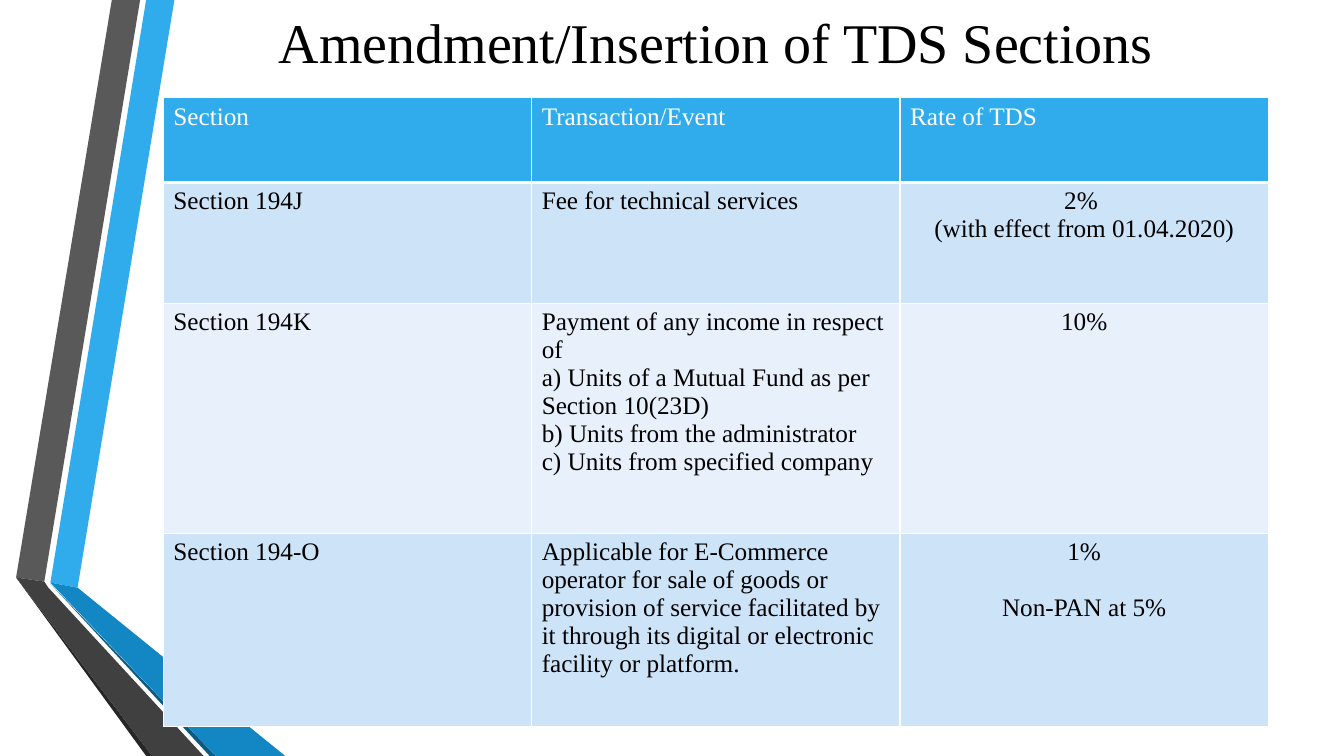
"""Build the slide on amended and inserted TDS sections."""
from lxml import etree
from pptx import Presentation
from pptx import util as u
from pptx.dml.color import RGBColor
from pptx.enum import text
from pptx.oxml.ns import qn

PX = 9144
FONT = "Times New Roman"
BLACK = RGBColor(0x00, 0x00, 0x00)
WHITE = RGBColor(0xFF, 0xFF, 0xFF)
BLUE = RGBColor(0x30, 0xAC, 0xEC)
MID_BLUE = RGBColor(0x12, 0x87, 0xC3)
DEEP_BLUE = RGBColor(0x0C, 0x5A, 0x82)
GREY = RGBColor(0x59, 0x59, 0x59)
DARK_GREY = RGBColor(0x40, 0x40, 0x40)
CHARCOAL = RGBColor(0x26, 0x26, 0x26)
BAND_DARK = RGBColor(0xCD, 0xE3, 0xF8)
BAND_LIGHT = RGBColor(0xE8, 0xF1, 0xFB)


def add_text(paragraph, words, size, color):
    run = paragraph.add_run()
    run.text = words
    run.font.name = FONT
    run.font.size = u.Pt(size)
    run.font.bold = False
    run.font.color.rgb = color


def add_border(cell, side, points):
    properties = cell._tc.get_or_add_tcPr()
    line = etree.SubElement(properties, qn(f"a:ln{side}"), w=str(u.Pt(points)))
    fill = etree.SubElement(line, qn("a:solidFill"))
    etree.SubElement(fill, qn("a:srgbClr"), val=str(WHITE))


presentation = Presentation()
presentation.slide_width = 1333 * PX
presentation.slide_height = 750 * PX
slide = presentation.slides.add_slide(presentation.slide_layouts[5])

ribbons = [
    (BLUE, [(50, 578), (77, 583), (173, 0), (145, 0)]),
    (GREY, [(139, 0), (111, 0), (16, 573), (44, 577)]),
    (CHARCOAL, [(16, 573), (145, 750), (151, 750)]),
    (DEEP_BLUE, [(50, 579), (208, 750), (214, 750)]),
    (MID_BLUE, [(50, 578), (214, 750), (283, 750), (77, 583)]),
    (DARK_GREY, [(202, 750), (48, 583), (44, 577), (16, 573), (151, 750)]),
]
for color, points in ribbons:
    builder = slide.shapes.build_freeform(*points[0], scale=PX)
    builder.add_line_segments(points[1:], close=True)
    ribbon = builder.convert_to_shape()
    ribbon.shadow.inherit = False
    ribbon.fill.solid()
    ribbon.fill.fore_color.rgb = color
    ribbon.line.fill.background()

title = slide.shapes.title
title.left, title.top, title.width, title.height = 162 * PX, 0, 1096 * PX, 82 * PX
title.text_frame.vertical_anchor = text.MSO_ANCHOR.MIDDLE
heading = title.text_frame.paragraphs[0]
heading.alignment = text.PP_ALIGN.CENTER
add_text(heading, "Amendment/Insertion of TDS Sections", 40, BLACK)

rows = [
    (84, BLUE, [["Section"], ["Transaction/Event"], ["Rate of TDS"]]),
    (120, BAND_DARK, [
        ["Section 194J"],
        ["Fee for technical services"],
        ["2% ", "(with effect from 01.04.2020)"],
    ]),
    (228, BAND_LIGHT, [
        ["Section 194K"],
        ["Payment of any income in respect of",
         "a) Units of a Mutual Fund as per Section 10(23D)",
         "b) Units from the administrator",
         "c) Units from specified company"],
        ["10%"],
    ]),
    (192, BAND_DARK, [
        ["Section 194-O"],
        ["Applicable for E-Commerce operator for sale of goods or provision of "
         "service facilitated by it through its digital or electronic facility "
         "or platform."],
        ["1%", "Non-PAN at 5%"],
    ]),
]
frame = slide.shapes.add_table(len(rows), 3, 162 * PX, 97 * PX, 1096 * PX, 624 * PX)
table = frame.table
for row_index, (height, fill_color, contents) in enumerate(rows):
    table.rows[row_index].height = height * PX
    for column_index, lines in enumerate(contents):
        cell = table.cell(row_index, column_index)
        add_border(cell, "L", 1)
        add_border(cell, "R", 1)
        add_border(cell, "T", 3 if row_index == 1 else 1)
        add_border(cell, "B", 3 if row_index == 0 else 1)
        cell.fill.solid()
        cell.fill.fore_color.rgb = fill_color
        for line_index, words in enumerate(lines):
            body = cell.text_frame
            paragraph = body.add_paragraph() if line_index else body.paragraphs[0]
            if row_index and column_index == 2:
                paragraph.alignment = text.PP_ALIGN.CENTER
            if words.startswith("Non-PAN"):
                paragraph.space_before = u.Pt(20)
            add_text(paragraph, words, 18, BLACK if row_index else WHITE)

presentation.save("out.pptx")
